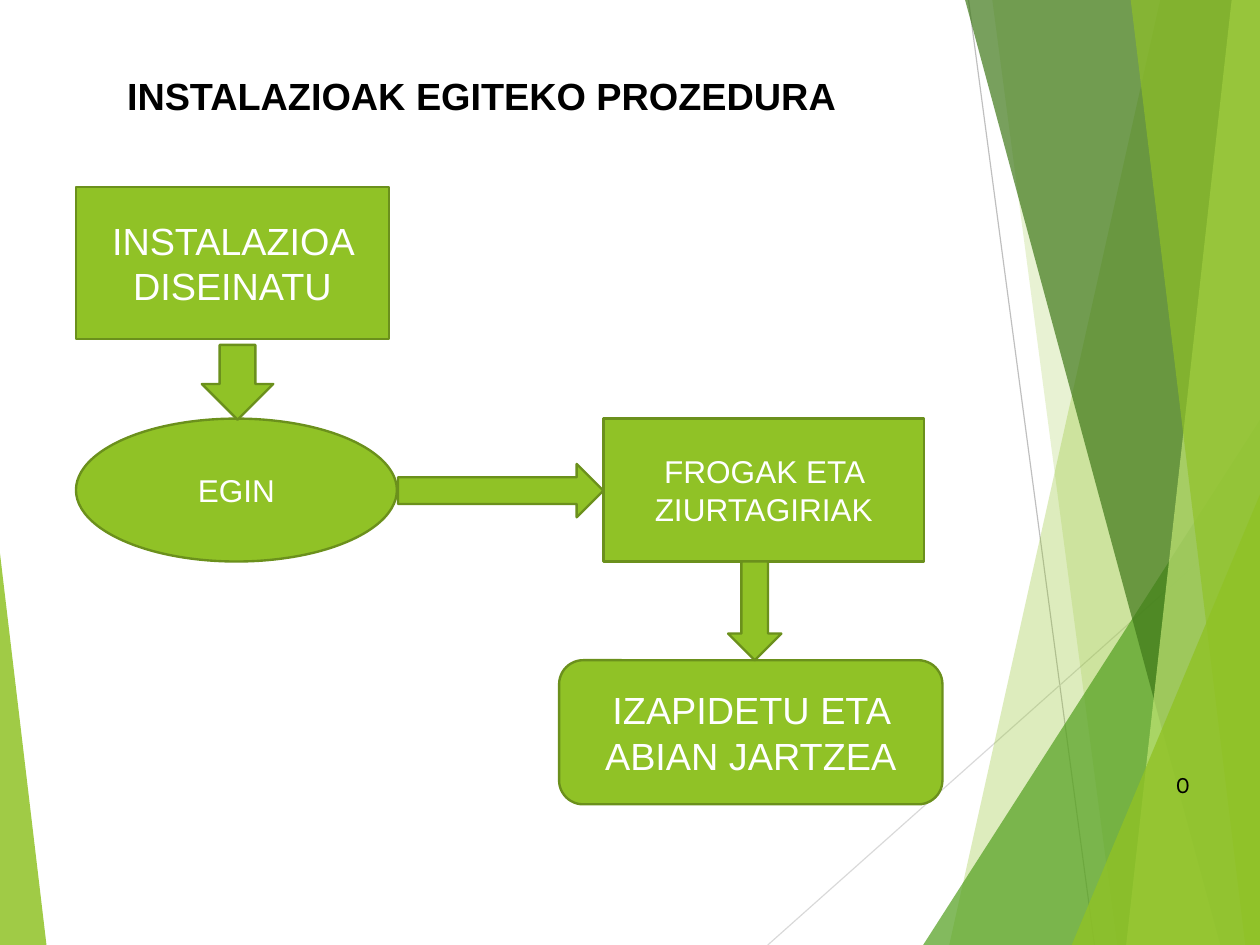
from lxml import etree
from pptx import Presentation
from pptx import util as u
from pptx.dml.color import RGBColor
from pptx.enum import shapes, text
from pptx.oxml.ns import qn

SHAPE = shapes.MSO_SHAPE
WIDTH, HEIGHT = 11.11, 8.33
GREEN, DARK_GREEN = "90C226", "6B901C"
BLACK, WHITE = "000000", "FFFFFF"


def colour(value):
    return RGBColor.from_string(value)


class SlideBuilder:
    font = "Arial"

    def __init__(self, slide):
        self.slide = slide

    def fill(self, shape, value):
        shape.shadow.inherit = False
        shape.fill.solid()
        shape.fill.fore_color.rgb = colour(value)

    def glaze(self, shape, value, opacity):
        self.fill(shape, value)
        shape.line.fill.background()
        tint = shape._element.spPr.find(f"{qn('a:solidFill')}/{qn('a:srgbClr')}")
        etree.SubElement(tint, qn("a:alpha"), val=str(opacity * 1000))

    def set_text(self, shape, words, size, value, align, anchor, font=None, bold=False):
        frame = shape.text_frame
        frame.word_wrap = True
        frame.auto_size = text.MSO_AUTO_SIZE.NONE
        frame.vertical_anchor = anchor
        frame.text = words
        paragraph = frame.paragraphs[0]
        paragraph.alignment = align
        paragraph.font.name = font or self.font
        paragraph.font.size = u.Pt(size)
        paragraph.font.bold = bold
        paragraph.font.color.rgb = colour(value)

    def title(self, words, box):
        heading = self.slide.shapes.title
        heading.left, heading.top, heading.width, heading.height = map(u.Inches, box)
        self.set_text(heading, words, 24, BLACK, text.PP_ALIGN.LEFT,
                      text.MSO_ANCHOR.TOP, bold=True)

    def page_number(self, words, box):
        number = self.slide.shapes.add_textbox(*map(u.Inches, box))
        self.set_text(number, words, 15, BLACK, text.PP_ALIGN.LEFT,
                      text.MSO_ANCHOR.TOP, font="Karla")

    def hairline(self, start, end, value):
        line = self.slide.shapes.add_connector(
            shapes.MSO_CONNECTOR.STRAIGHT, *map(u.Inches, start + end))
        line.line.color.rgb = colour(value)
        line.line.width = u.Pt(0.75)
        etree.SubElement(line._element.spPr, qn("a:effectLst"))

    def band(self, top_left, bottom_left, value, opacity):
        corners = [(WIDTH, 0), (WIDTH, HEIGHT), (bottom_left, HEIGHT)]
        outline = self.slide.shapes.build_freeform(u.Inches(top_left), 0)
        outline.add_line_segments([(u.Inches(x), u.Inches(y)) for x, y in corners])
        self.glaze(outline.convert_to_shape(), value, opacity)

    def corner(self, left, top, width, apex, value, opacity):
        triangle = self.slide.shapes.add_shape(
            SHAPE.ISOSCELES_TRIANGLE,
            *map(u.Inches, (left, top, width, HEIGHT - top)))
        triangle.adjustments[0] = apex
        self.glaze(triangle, value, opacity)

    def step(self, kind, box, words="", size=24):
        step = self.slide.shapes.add_shape(kind, *map(u.Inches, box))
        self.fill(step, GREEN)
        step.line.color.rgb = colour(DARK_GREEN)
        step.line.width = u.Pt(1.5)
        if words:
            self.set_text(step, words, size, WHITE, text.PP_ALIGN.CENTER,
                          text.MSO_ANCHOR.MIDDLE)


def main():
    deck = Presentation()
    deck.slide_width, deck.slide_height = u.Inches(WIDTH), u.Inches(HEIGHT)
    page = SlideBuilder(deck.slides.add_slide(deck.slide_layouts[5]))

    page.hairline((8.54, 0), (9.65, HEIGHT), "BFBFBF")
    page.hairline((WIDTH, 4.47), (6.77, HEIGHT), "D9D9D9")
    page.band(10.23, 8.37, GREEN, 30)
    page.band(8.75, 9.85, GREEN, 20)
    page.corner(8.14, 3.7, 2.97, 1, "54A021", 72)
    page.band(8.51, 10.76, "3F7819", 70)
    page.band(10.86, 9.93, "C0E474", 70)
    page.band(9.97, 10.98, GREEN, 65)
    page.corner(9.45, 4.36, 1.66, 1, GREEN, 80)
    page.corner(0, 4.88, 0.41, 0, GREEN, 85)

    page.page_number("0", (10.27, 6.74, 0.47, 0.35))
    page.title("INSTALAZIOAK EGITEKO PROZEDURA", (1.02, 0.59, 7.13, 0.73))

    page.step(SHAPE.ROUNDED_RECTANGLE, (4.93, 5.82, 3.38, 1.27),
              "IZAPIDETU ETA ABIAN JARTZEA")
    page.step(SHAPE.RECTANGLE, (0.67, 1.65, 2.76, 1.34), "INSTALAZIOA DISEINATU")
    page.step(SHAPE.OVAL, (0.67, 3.69, 2.83, 1.26), "EGIN", 20)
    page.step(SHAPE.RECTANGLE, (5.32, 3.69, 2.83, 1.26), "FROGAK ETA ZIURTAGIRIAK", 20)
    page.step(SHAPE.DOWN_ARROW, (1.78, 3.04, 0.63, 0.66))
    page.step(SHAPE.RIGHT_ARROW, (3.51, 4.09, 1.81, 0.47))
    page.step(SHAPE.DOWN_ARROW, (6.42, 4.95, 0.47, 0.87))

    deck.save("out.pptx")


if __name__ == "__main__":
    main()
